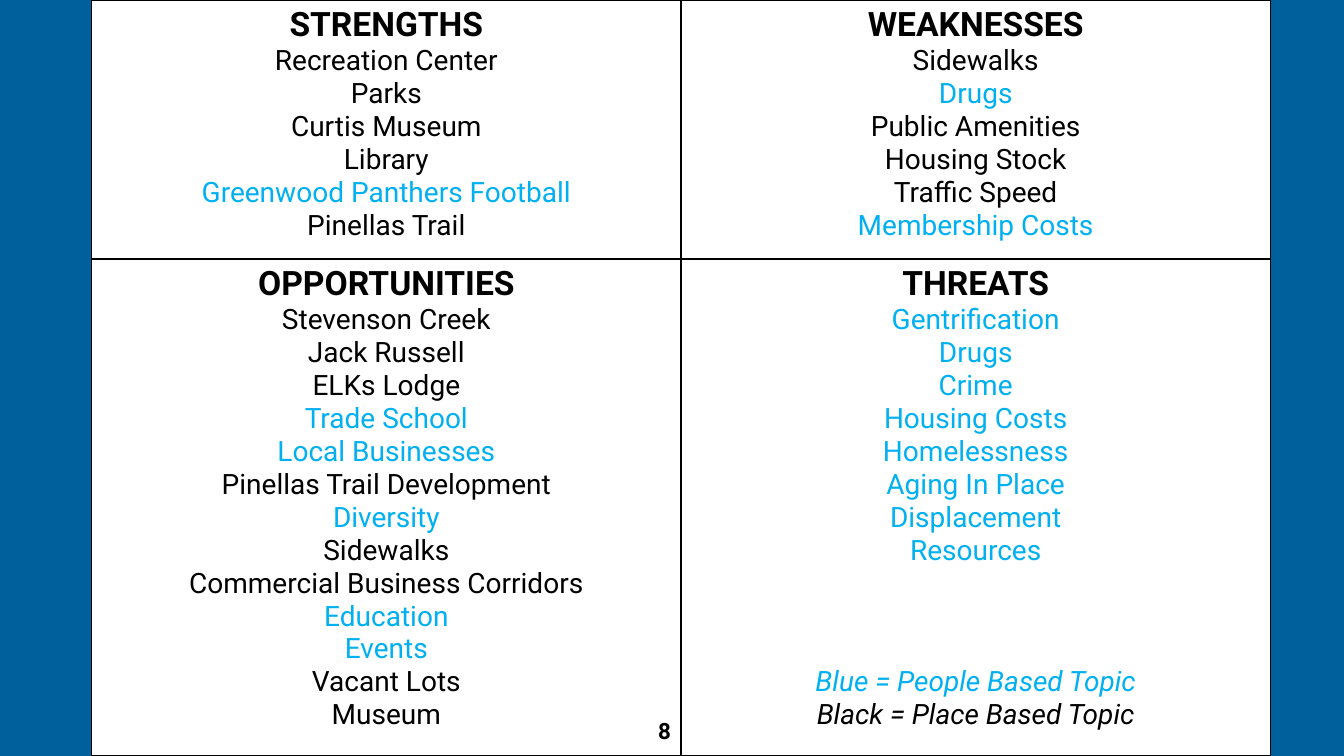
import pptx
import pptx.util
import pptx.dml.color
import pptx.enum.text
import pptx.oxml.ns
from lxml import etree
from pptx.util import Inches, Pt

FONT = "Roboto"
COLORS = {"back": "00609C", "cell": "FFFFFF", "place": "000000",
          "people": "00B0F0", "line": "000000"}

# Each quadrant: heading, then its topics
GRID = [
    [("STRENGTHS", ["Recreation Center", "Parks", "Curtis Museum", "Library",
                    "Greenwood Panthers Football", "Pinellas Trail"]),
     ("WEAKNESSES", ["Sidewalks", "Drugs", "Public Amenities",
                     "Housing Stock", "Traffic Speed", "Membership Costs"])],
    [("OPPORTUNITIES", ["Stevenson Creek", "Jack Russell", "ELKs Lodge",
                        "Trade School", "Local Businesses",
                        "Pinellas Trail Development", "Diversity",
                        "Sidewalks", "Commercial Business Corridors",
                        "Education", "Events", "Vacant Lots", "Museum"]),
     ("THREATS", ["Gentrification", "Drugs", "Crime", "Housing Costs",
                  "Homelessness", "Aging In Place", "Displacement",
                  "Resources"])],
]
PEOPLE = {"Greenwood Panthers Football", "Drugs", "Membership Costs",
          "Trade School", "Local Businesses", "Diversity", "Education",
          "Events", "Gentrification", "Crime", "Housing Costs",
          "Homelessness", "Aging In Place", "Displacement", "Resources"}
LEGEND = [("Blue = People Based Topic", "people"),
          ("Black = Place Based Topic", "place")]


def color(key):
    return pptx.dml.color.RGBColor.from_string(COLORS[key])


def add_run(para, text, size, key="place", bold=False, italic=False):
    run = para.add_run()
    run.text = text
    font = run.font
    font.name, font.size = FONT, Pt(size)
    font.bold, font.italic = bold, italic
    font.color.rgb = color(key)


def add_line(frame, text, size=20, key="place", **style):
    """Add a centred paragraph below the ones already there."""
    para = frame.paragraphs[0] if not frame.text else frame.add_paragraph()
    para.alignment = pptx.enum.text.PP_ALIGN.CENTER
    add_run(para, text, size, key, **style)
    return para


def set_borders(cell):
    props = cell._tc.get_or_add_tcPr()
    qn = pptx.oxml.ns.qn
    for side in ("lnL", "lnR", "lnT", "lnB"):
        line = etree.SubElement(props, qn("a:" + side), w=str(Pt(1)))
        fill = etree.SubElement(line, qn("a:solidFill"))
        etree.SubElement(fill, qn("a:srgbClr"), val=COLORS["line"])


def fill_cell(cell, head, topics):
    set_borders(cell)
    cell.fill.solid()
    cell.fill.fore_color.rgb = color("cell")
    add_line(cell.text_frame, head, 24, bold=True)
    for topic in topics:
        key = "people" if topic in PEOPLE else "place"
        add_line(cell.text_frame, topic, key=key)


def add_legend(cell):
    paras = [add_line(cell.text_frame, text, key=key, italic=True)
             for text, key in LEGEND]
    paras[0].space_before = Pt(70.5)


def add_grid(slide):
    table = slide.shapes.add_table(2, 2, Inches(0.91), Inches(0),
                                   Inches(11.69), Inches(7.5)).table
    table.first_row = table.horz_banding = False
    for row, height in zip(table.rows, (2.57, 4.93)):
        row.height = Inches(height)
    for row, quads in enumerate(GRID):
        for col, (head, topics) in enumerate(quads):
            fill_cell(table.cell(row, col), head, topics)
    add_legend(table.cell(1, 1))


def add_number(slide, text):
    box = slide.shapes.add_textbox(Inches(6.43), Inches(7.07),
                                   Inches(0.48), Inches(0.37))
    frame = box.text_frame
    frame.word_wrap = True
    frame.auto_size = pptx.enum.text.MSO_AUTO_SIZE.SHAPE_TO_FIT_TEXT
    add_run(frame.paragraphs[0], text, 16, bold=True)


def main():
    deck = pptx.Presentation()
    deck.slide_width, deck.slide_height = Inches(13.33), Inches(7.5)
    slide = deck.slides.add_slide(deck.slide_layouts[6])

    # Backdrop
    slide.background.fill.solid()
    slide.background.fill.fore_color.rgb = color("back")

    # SWOT table and page number
    add_grid(slide)
    add_number(slide, "8")
    deck.save("out.pptx")


if __name__ == "__main__":
    main()
